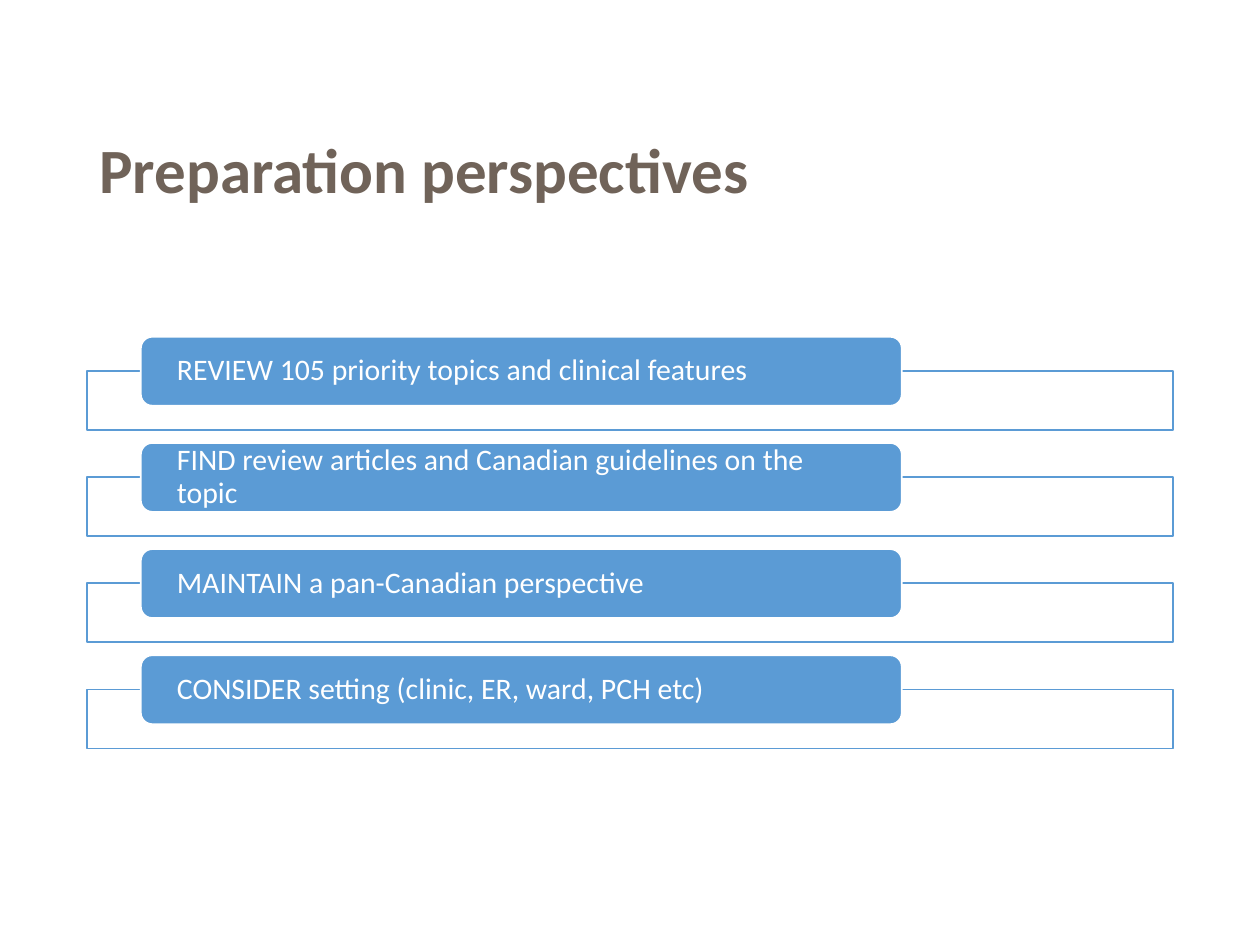
from dataclasses import dataclass

from lxml.etree import SubElement
from pptx import Presentation
from pptx.dml.color import RGBColor
from pptx.enum.shapes import MSO_SHAPE
from pptx.enum.text import MSO_ANCHOR, MSO_AUTO_SIZE, PP_ALIGN
from pptx.oxml.ns import qn
from pptx.util import Cm, Pt


@dataclass(frozen=True)
class Theme:
    font: str = "Calibri"
    title: RGBColor = RGBColor(0x70, 0x63, 0x59)
    blue: RGBColor = RGBColor(0x5B, 0x9B, 0xD5)
    white: RGBColor = RGBColor(0xFF, 0xFF, 0xFF)
    head: Pt = Pt(36)
    body: Pt = Pt(17)
    line: Pt = Pt(1)


@dataclass(frozen=True)
class Box:
    left: float
    top: float
    width: float
    height: float

    def place(self, down: float = 0) -> tuple:
        return Cm(self.left), Cm(self.top + down), Cm(self.width), Cm(self.height)


THEME = Theme()
TITLE = Box(1.75, 2.26, 21.9, 2.44)
FRAME = Box(1.75, 7.48, 21.9, 1.19)
LABEL = Box(2.84, 6.79, 15.34, 1.39)
PITCH = 2.14
INSET = Cm(0.66)
STEPS = (
    "REVIEW 105 priority topics and clinical features",
    "FIND review articles and Canadian guidelines on the topic",
    "MAINTAIN a pan-Canadian perspective",
    "CONSIDER setting (clinic, ER, ward, PCH etc)",
)


def write(frame, text: str, size: Pt, color: RGBColor, bold: bool = False) -> None:
    frame.word_wrap = True
    frame.auto_size = MSO_AUTO_SIZE.NONE
    frame.vertical_anchor = MSO_ANCHOR.MIDDLE
    para = frame.paragraphs[0]
    para.alignment = PP_ALIGN.LEFT
    para.line_spacing = 0.9
    run = para.add_run()
    run.text = text
    run.font.name = THEME.font
    run.font.size = size
    run.font.bold = bold
    run.font.color.rgb = color


def add_box(group, kind: MSO_SHAPE, place: tuple, fill: RGBColor, line: RGBColor):
    shape = group.shapes.add_shape(kind, *place)
    shape.shadow.inherit = False
    shape.fill.solid()
    shape.fill.fore_color.rgb = fill
    shape.line.color.rgb = line
    shape.line.width = THEME.line
    return shape


def fade(shape, percent: int) -> None:
    """Set the opacity of a solid fill."""
    color = shape.fill._xPr.find(qn("a:solidFill"))[0]
    SubElement(color, qn("a:alpha")).set("val", str(percent * 1000))


def add_step(group, text: str, down: float) -> None:
    frame = add_box(group, MSO_SHAPE.RECTANGLE, FRAME.place(down), THEME.white, THEME.blue)
    fade(frame, 90)
    label = add_box(group, MSO_SHAPE.ROUNDED_RECTANGLE, LABEL.place(down),
                    THEME.blue, THEME.white)
    area = label.text_frame
    area.margin_left = area.margin_right = INSET
    area.margin_top = area.margin_bottom = 0
    write(area, text, THEME.body, THEME.white)


def main() -> None:
    deck = Presentation()
    deck.slide_width, deck.slide_height = Cm(25.4), Cm(19.05)
    slide = deck.slides.add_slide(deck.slide_layouts[5])
    title = slide.shapes.title
    title.left, title.top, title.width, title.height = TITLE.place()
    write(title.text_frame, "Preparation perspectives", THEME.head, THEME.title, bold=True)
    group = slide.shapes.add_group_shape()
    for row, text in enumerate(STEPS):
        add_step(group, text, row * PITCH)
    deck.save("out.pptx")


if __name__ == "__main__":
    main()
